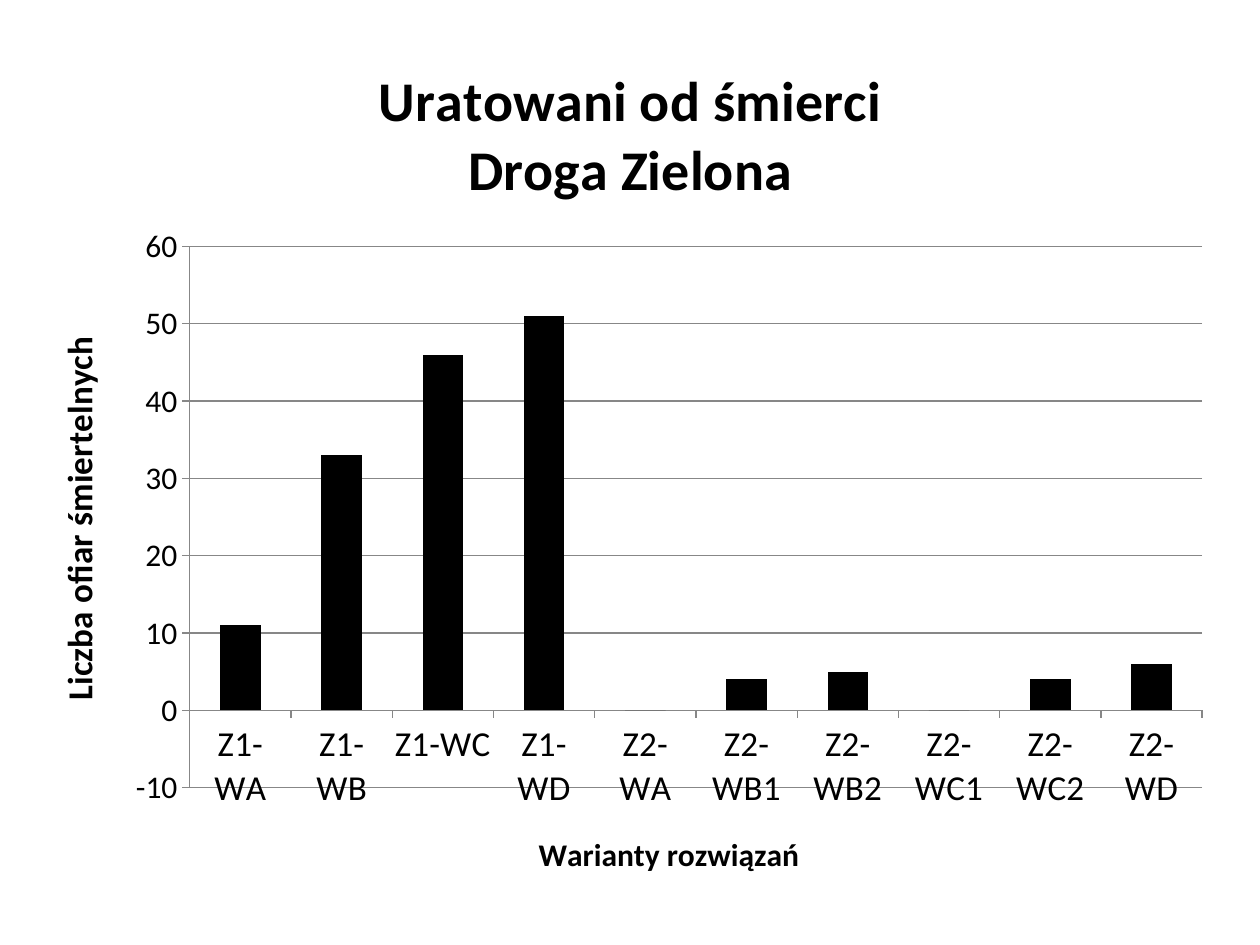
from lxml import etree
from pptx import Presentation
from pptx.chart.data import CategoryChartData
from pptx.dml.color import RGBColor
from pptx.enum.chart import XL_CHART_TYPE, XL_TICK_MARK
from pptx.oxml.ns import qn
from pptx.util import Emu, Pt

PIXEL = 914400 / 126
BLACK = RGBColor(0, 0, 0)
GRAY = RGBColor(0x87, 0x87, 0x87)
FONT = "Calibri"

RESCUED = {
    "Z1-WA": 11, "Z1-WB": 33, "Z1-WC": 46, "Z1-WD": 51, "Z2-WA": 0,
    "Z2-WB1": 4, "Z2-WB2": 5, "Z2-WC1": 0, "Z2-WC2": 4, "Z2-WD": 6,
}


def px(length):
    return Emu(round(length * PIXEL))


def style_font(font, size, bold=False):
    font.name = FONT
    font.size = Pt(size)
    font.bold = bold
    font.color.rgb = BLACK


def set_title(owner, lines, size):
    """Give a chart or an axis a bold title, one paragraph a line."""
    owner.has_title = True
    title = owner.chart_title if hasattr(owner, "chart_title") else owner.axis_title
    frame = title.text_frame
    for index, line in enumerate(lines):
        paragraph = frame.add_paragraph() if index else frame.paragraphs[0]
        run = paragraph.add_run()
        run.text = line
        style_font(run.font, size, bold=True)


def style_axis(axis, title, title_size, label_size):
    set_title(axis, [title], title_size)
    style_font(axis.tick_labels.font, label_size)
    axis.major_tick_mark = XL_TICK_MARK.OUTSIDE
    axis.minor_tick_mark = XL_TICK_MARK.NONE
    axis.format.line.color.rgb = GRAY
    axis.format.line.width = Pt(0.75)


def set_plot_box(chart, **fractions):
    """Fix the inner plot area as fractions of the chart."""
    plot_area = chart.plots[0]._element.getparent()
    for old_layout in plot_area.findall(qn("c:layout")):
        plot_area.remove(old_layout)
    layout = etree.Element(qn("c:layout"))
    plot_area.insert(0, layout)
    manual = etree.SubElement(layout, qn("c:manualLayout"))
    settings = {"layoutTarget": "inner", "xMode": "edge", "yMode": "edge", **fractions}
    for name, value in settings.items():
        etree.SubElement(manual, qn(f"c:{name}")).set("val", str(value))


def add_rescued_chart(slide, left, top, width, height):
    data = CategoryChartData(number_format="0")
    data.categories = list(RESCUED)
    data.add_series("Series 1", list(RESCUED.values()))
    chart = slide.shapes.add_chart(
        XL_CHART_TYPE.COLUMN_CLUSTERED, px(left), px(top), px(width), px(height), data
    ).chart
    style_font(chart.font, 10)
    chart.has_legend = False
    set_title(chart, ["Uratowani od śmierci", "Droga Zielona"], 32)
    set_plot_box(chart, x=0.13, y=0.24, w=0.85, h=0.62)

    # Columns
    plot = chart.plots[0]
    plot.gap_width = 150
    plot.vary_by_categories = False
    fill = plot.series[0].format.fill
    fill.solid()
    fill.fore_color.rgb = BLACK

    # Axes
    style_axis(chart.category_axis, "Warianty rozwiązań", 18, 20)
    value_axis = chart.value_axis
    style_axis(value_axis, "Liczba ofiar śmiertelnych", 20, 18)
    value_axis.minimum_scale = -10
    value_axis.maximum_scale = 60
    value_axis.major_unit = 10
    value_axis.tick_labels.number_format = "0"
    value_axis.tick_labels.number_format_is_linked = False
    value_axis.has_major_gridlines = True
    grid_line = value_axis.major_gridlines.format.line
    grid_line.color.rgb = GRAY
    grid_line.width = Pt(0.75)


def main():
    presentation = Presentation()
    presentation.slide_width = px(1260)
    presentation.slide_height = px(945)
    slide = presentation.slides.add_slide(presentation.slide_layouts[6])
    add_rescued_chart(slide, 35, 37, 1191, 873)
    presentation.save("out.pptx")


if __name__ == "__main__":
    main()
